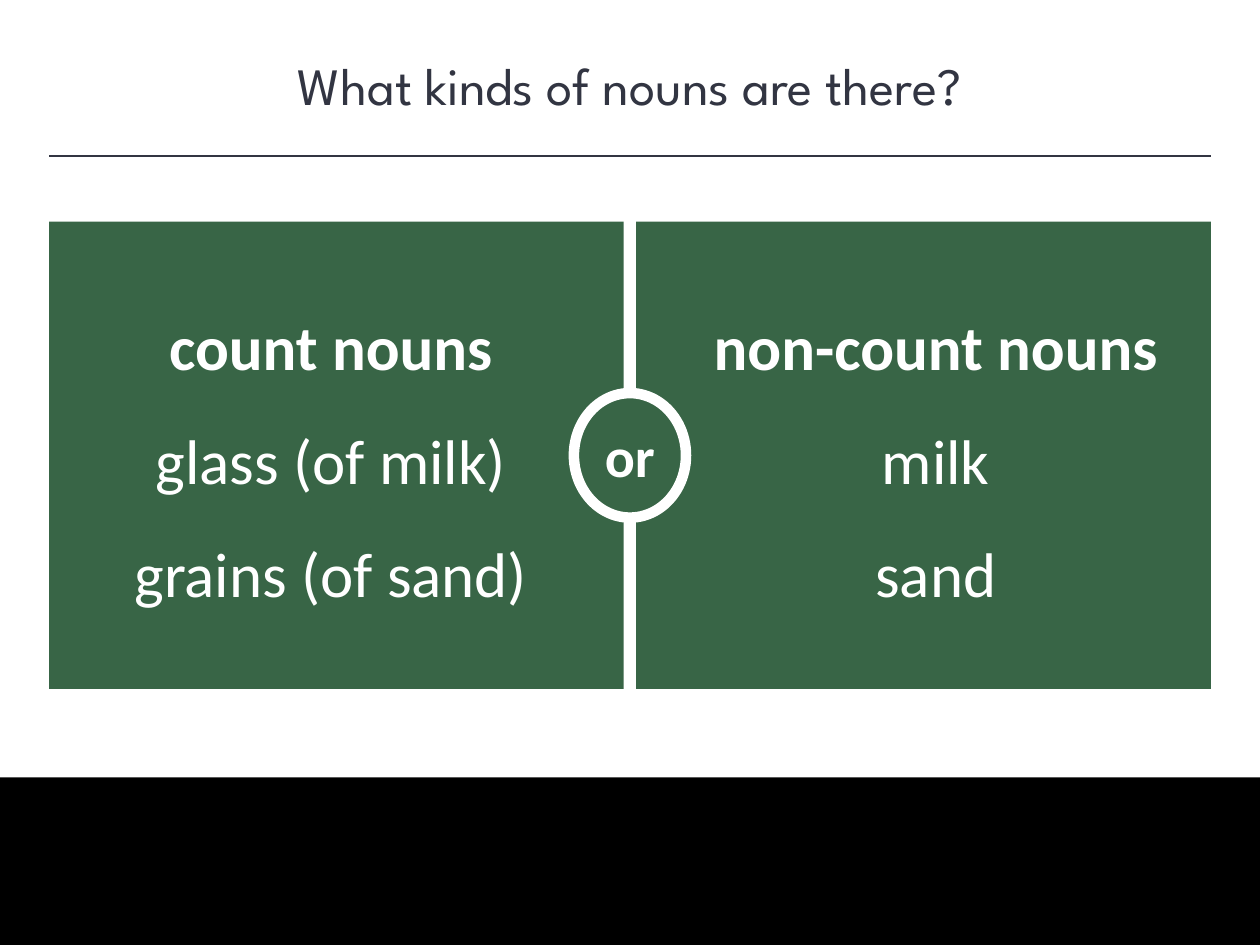
from pptx import Presentation
from pptx.dml.color import RGBColor
from pptx.enum.shapes import MSO_CONNECTOR, MSO_SHAPE
from pptx.enum.text import MSO_ANCHOR, MSO_AUTO_SIZE, PP_ALIGN
from pptx.util import Cm, Pt
from lxml import etree

RECT, OVAL = MSO_SHAPE.RECTANGLE, MSO_SHAPE.OVAL
LINE = MSO_CONNECTOR.STRAIGHT
TOP, MID = MSO_ANCHOR.TOP, MSO_ANCHOR.MIDDLE
FIXED = MSO_AUTO_SIZE.NONE
CENTER = PP_ALIGN.CENTER
NS = "{http://schemas.openxmlformats.org/drawingml/2006/main}"

TITLE = "What kinds of nouns are there?"
JOIN = "or"
LISTS = [
    (["count nouns", "glass (of milk)", "grains (of sand)"], 2.06, 9.22),
    (["non-count nouns", "milk", "sand"], 14, 9.73),
]
INK, GREEN, WHITE, BLACK = "323542", "386546", "FFFFFF", "000000"
WIDE, HIGH = 25.4, 19.05
EDGE, GAP = 0.99, 0.25
PANEL = (WIDE - 2 * EDGE - GAP) / 2
PANEL_TOP, PANEL_HIGH = 4.47, 9.42
RULE_TOP, FOOT_TOP = 3.15, 15.67
OVAL_WIDE, OVAL_HIGH = 2.26, 2.51


def color(code):
    """Turn a hex string into a colour."""
    return RGBColor.from_string(code)


def place(shape, *box):
    """Move and size a shape in centimetres."""
    for name, value in zip(("left", "top", "width", "height"), box):
        setattr(shape, name, Cm(value))


def write(shape, lines, size, face, code, anchor, gap=1.0, head=False):
    """Fill a shape with centred lines, the first one bold if head is set."""
    frame = shape.text_frame
    frame.text = "\n".join(lines)
    form = {"word_wrap": True, "auto_size": FIXED, "vertical_anchor": anchor}
    for name, value in form.items():
        setattr(frame, name, value)
    for i, para in enumerate(frame.paragraphs):
        form = {"alignment": CENTER, "line_spacing": gap,
                "space_before": Pt(0), "space_after": Pt(0)}
        for name, value in form.items():
            setattr(para, name, value)
        font = para.runs[0].font
        form = {"size": Pt(size), "name": face, "bold": head and i == 0}
        for name, value in form.items():
            setattr(font, name, value)
        font.color.rgb = color(code)


def block(slide, kind, box, fill):
    """Add a plain filled shape without outline or shadow."""
    shape = slide.shapes.add_shape(kind, *map(Cm, box))
    shape.shadow.inherit = False
    shape.fill.solid()
    shape.fill.fore_color.rgb = color(fill)
    shape.line.fill.background()
    return shape


def rule(slide):
    """Draw the line below the title."""
    line = slide.shapes.add_connector(
        LINE, Cm(EDGE), Cm(RULE_TOP), Cm(WIDE - EDGE), Cm(RULE_TOP))
    line.line.color.rgb = color(INK)
    line.line.width = Pt(1)
    etree.SubElement(line.element.spPr, NS + "effectLst")


def fill_list(body, lines, left, width):
    """Put one list of nouns on top of its panel."""
    place(body, left, 5.28, width, 7.19)
    write(body, lines, 36, "Calibri", WHITE, MID, 1.5, True)
    for para in body.text_frame.paragraphs:
        props = para._p.get_or_add_pPr()
        props.set("marL", "0")
        props.set("indent", "0")
        etree.SubElement(props, NS + "buNone")
    body.element.getparent().append(body.element)


def main():
    """Build the slide and save it."""
    deck = Presentation()
    deck.slide_width, deck.slide_height = Cm(WIDE), Cm(HIGH)
    slide = deck.slides.add_slide(deck.slide_layouts[3])
    title = slide.shapes.title
    place(title, 0, 0.94, WIDE, 1.55)
    write(title, [TITLE], 30, "League Spartan", INK, TOP)

    block(slide, RECT, (0, FOOT_TOP, WIDE, HIGH - FOOT_TOP), BLACK)
    rule(slide)
    for i in range(len(LISTS)):
        left = EDGE + i * (PANEL + GAP)
        block(slide, RECT, (left, PANEL_TOP, PANEL, PANEL_HIGH), GREEN)

    mid = PANEL_TOP + PANEL_HIGH / 2
    box = ((WIDE - OVAL_WIDE) / 2, mid - OVAL_HIGH / 2, OVAL_WIDE, OVAL_HIGH)
    badge = block(slide, OVAL, box, GREEN)
    badge.line.color.rgb = color(WHITE)
    badge.line.width = Pt(6)
    write(badge, [JOIN], 32, "Calibri", WHITE, MID, head=True)
    badge.text_frame.word_wrap = False

    for i, (lines, left, width) in enumerate(LISTS, 1):
        fill_list(slide.placeholders[i], lines, left, width)
    deck.save("out.pptx")


if __name__ == "__main__":
    main()
